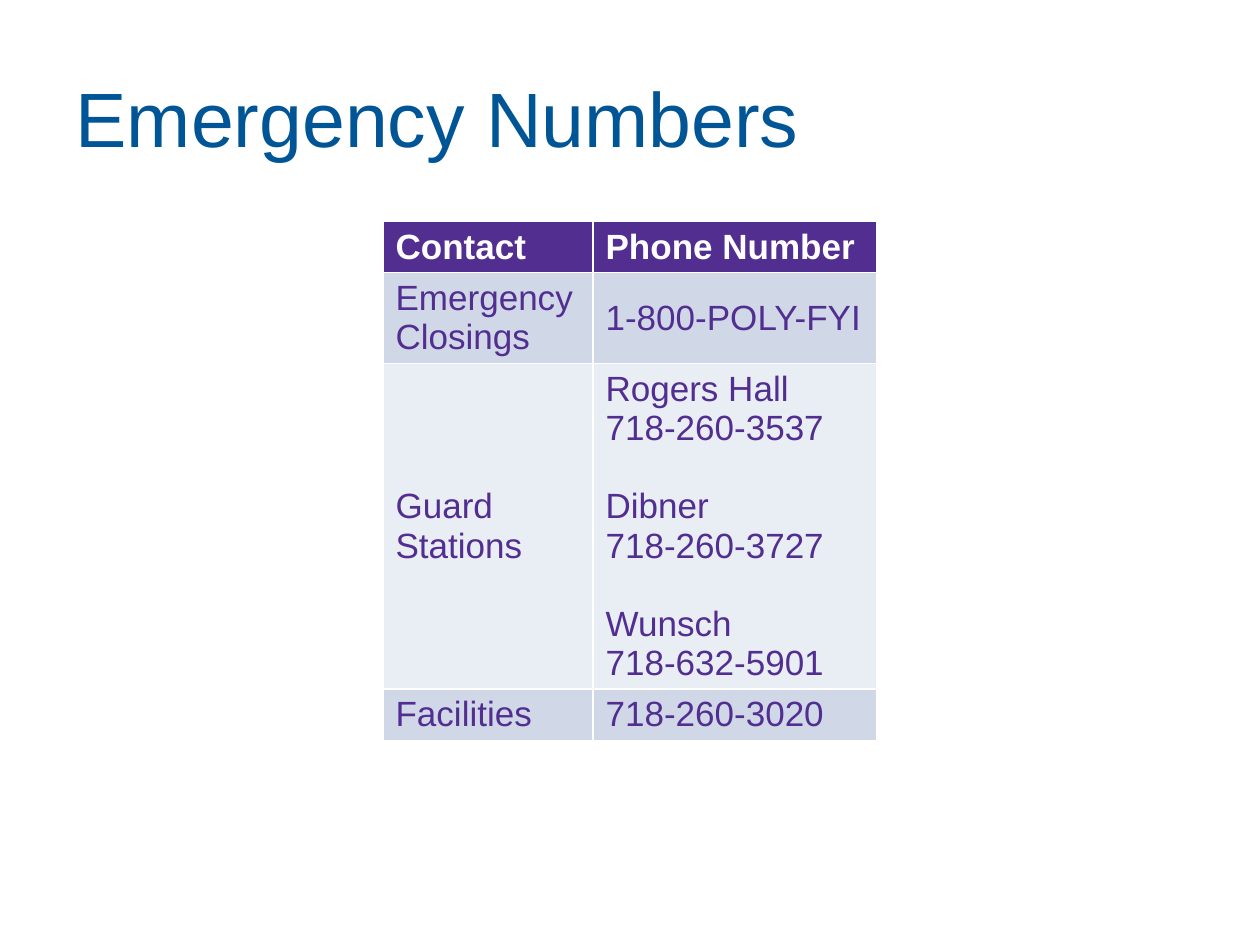
from dataclasses import dataclass

from pptx import Presentation
from pptx.dml.color import RGBColor
from pptx.enum.text import MSO_ANCHOR, PP_ALIGN
from pptx.util import Pt

MIDDLE = MSO_ANCHOR.MIDDLE
LEFT = PP_ALIGN.LEFT
TITLE_ONLY = 5


@dataclass(frozen=True)
class Theme:
    """Hold the colours, font and type sizes of the slide."""

    font: str = "Arial"
    title_colour: str = "005596"
    purple: str = "522E91"
    white: str = "FFFFFF"
    bands: tuple = ("D0D8E8", "E9EDF4")
    title_size: int = 44
    table_size: int = 20
    group_gap: float = 22.4


THEME = Theme()

CONTACTS = [
    ("Contact", [["Phone Number"]]),
    ("Emergency Closings", [["1-800-POLY-FYI"]]),
    ("Guard Stations", [
        ["Rogers Hall", "718-260-3537"],
        ["Dibner", "718-260-3727"],
        ["Wunsch", "718-632-5901"],
    ]),
    ("Facilities", [["718-260-3020"]]),
]


def px(length):
    """Turn whole pixels into EMU at 126 pixels to the inch."""
    return length * 914400 // 126


def add_run(paragraph, text, size, colour, bold=False):
    """Add one formatted run to a paragraph."""
    run = paragraph.add_run()
    run.text = text
    run.font.name = THEME.font
    run.font.size = Pt(size)
    run.font.bold = bold
    run.font.color.rgb = RGBColor.from_string(colour)


def place_title(slide, box, text):
    """Move the title placeholder to the box and fill it."""
    title = slide.shapes.title
    title.left, title.top, title.width, title.height = map(px, box)
    frame = title.text_frame
    frame.vertical_anchor = MIDDLE
    heading = frame.paragraphs[0]
    heading.alignment = LEFT
    add_run(heading, text, THEME.title_size, THEME.title_colour)


def fill_cell(cell, groups, fill, colour, bold):
    """Write groups of lines into a cell, set one line apart."""
    cell.fill.solid()
    cell.fill.fore_color.rgb = RGBColor.from_string(fill)
    cell.vertical_anchor = MIDDLE
    frame = cell.text_frame
    for group_index, lines in enumerate(groups):
        for line_index, line in enumerate(lines):
            first = group_index == line_index == 0
            paragraph = frame.paragraphs[0] if first else frame.add_paragraph()
            if group_index and line_index == 0:
                paragraph.space_before = Pt(THEME.group_gap)
            add_run(paragraph, line, THEME.table_size, colour, bold)


def place_contacts(slide, box, contacts, column_widths, row_heights):
    """Build the banded table of contacts in the box."""
    table = slide.shapes.add_table(
        len(contacts), len(column_widths), *map(px, box)).table
    for column, width in zip(table.columns, column_widths):
        column.width = px(width)
    for index, (contact, numbers) in enumerate(contacts):
        table.rows[index].height = px(row_heights[index])
        header = index == 0
        fill = THEME.purple if header else THEME.bands[(index - 1) % 2]
        colour = THEME.white if header else THEME.purple
        for column, groups in enumerate(([[contact]], numbers)):
            fill_cell(table.cell(index, column), groups, fill, colour, header)


def main():
    """Build and save the slide."""
    deck = Presentation()
    deck.slide_width, deck.slide_height = px(1260), px(945)
    slide = deck.slides.add_slide(deck.slide_layouts[TITLE_ONLY])
    place_title(slide, (63, 38, 1134, 157), "Emergency Numbers")
    place_contacts(slide, (383, 221, 494, 518), CONTACTS,
                   (210, 284), (51, 91, 325, 51))
    deck.save("out.pptx")


if __name__ == "__main__":
    main()
